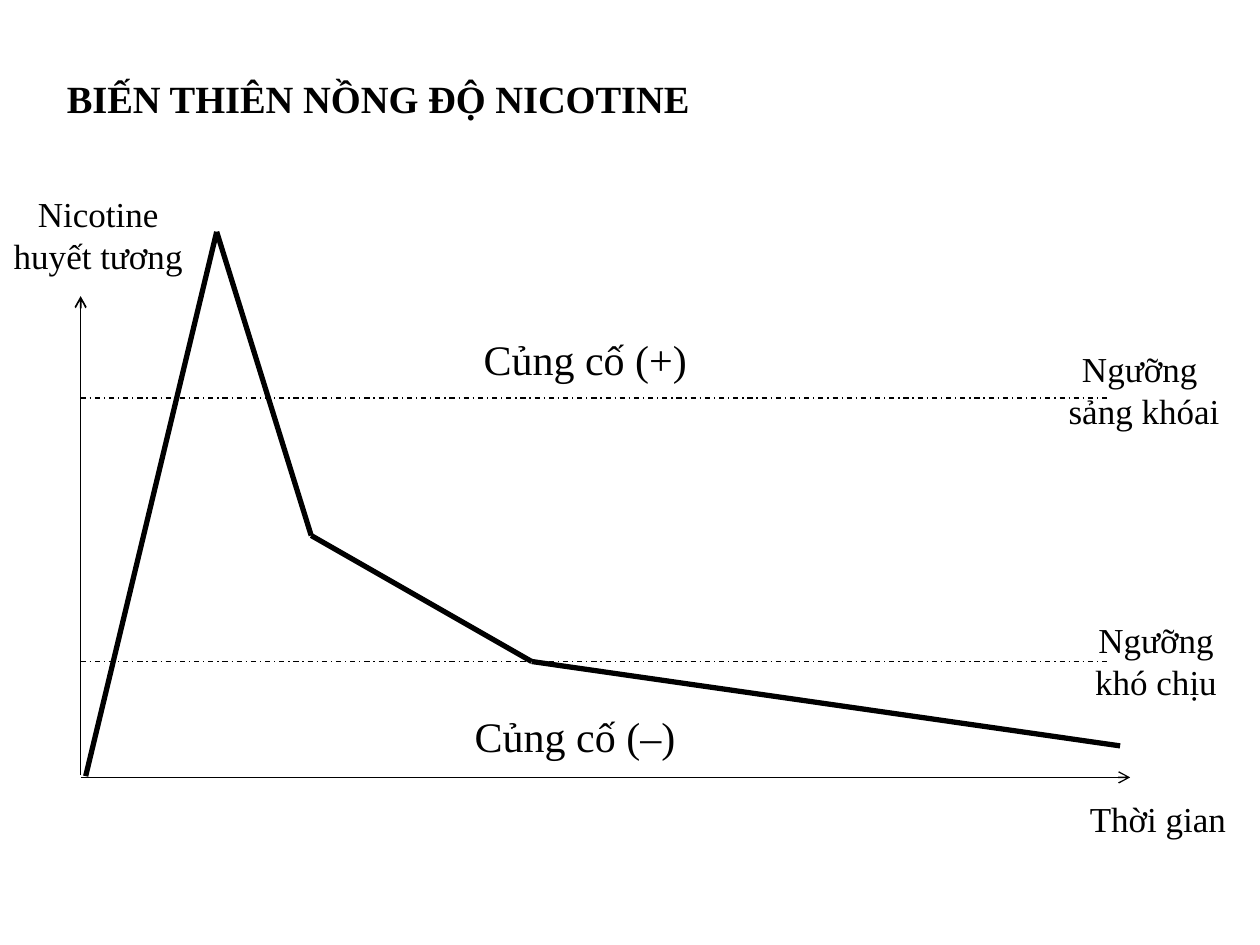
import pptx
import pptx.util
import pptx.dml.color
import pptx.enum.dml
import pptx.enum.shapes
import pptx.enum.text
import pptx.oxml.ns
from lxml import etree
from pptx.util import Inches

COLORS = {"ink": "000000"}
FONT = "Times New Roman"
ALIGN = pptx.enum.text.PP_ALIGN
INK = pptx.dml.color.RGBColor.from_string(COLORS["ink"])


def add_run(paragraph, text, size, bold=False):
    run = paragraph.add_run()
    run.text = text
    run.font.name = FONT
    run.font.size = pptx.util.Pt(size)
    run.font.bold = bold
    run.font.color.rgb = INK


def add_line(slide, start, end, width, dashed=False, arrow=False):
    line = slide.shapes.add_connector(
        pptx.enum.shapes.MSO_CONNECTOR.STRAIGHT,
        *(Inches(value) for value in (*start, *end)))
    line.line.color.rgb = INK
    line.line.width = pptx.util.Pt(width)
    if dashed:
        line.line.dash_style = pptx.enum.dml.MSO_LINE.DASH_DOT
    if arrow:
        tail = etree.SubElement(line.line._get_or_add_ln(), pptx.oxml.ns.qn("a:tailEnd"))
        tail.set("type", "arrow")
    etree.SubElement(line._element.spPr, pptx.oxml.ns.qn("a:effectLst"))


def add_label(slide, box, lines, size=20):
    """Centred text, one paragraph for each line."""
    frame = slide.shapes.add_textbox(*(Inches(value) for value in box)).text_frame
    frame.word_wrap = True
    for index, text in enumerate(lines):
        paragraph = frame.add_paragraph() if index else frame.paragraphs[0]
        paragraph.alignment = ALIGN.CENTER
        add_run(paragraph, text, size)
    return frame


def add_title(slide, box):
    title = slide.shapes.title
    title.left, title.top, title.width, title.height = (Inches(value) for value in box)
    frame = title.text_frame
    frame.word_wrap = True
    frame.auto_size = pptx.enum.text.MSO_AUTO_SIZE.NONE
    frame.vertical_anchor = pptx.enum.text.MSO_ANCHOR.MIDDLE
    heading = frame.paragraphs[0]
    heading.alignment = ALIGN.LEFT
    heading.line_spacing = 0.9
    add_run(heading, "BIẾN THIÊN NỒNG ĐỘ NICOTINE", 22, bold=True)


def add_curve_diagram(slide, box):
    left, top, width, height = box
    bottom = top + height

    def place(x, y):
        return left + x, top + y

    # Axes
    add_line(slide, (left, bottom - 0.02), (left, top), 1, arrow=True)
    add_line(slide, (left, bottom), (left + width, bottom), 0.75, arrow=True)

    # Nicotine level over time
    levels = [(0.04, 3.81), (1.08, -0.51), (1.83, 1.9), (3.58, 2.9), (8.25, 3.57)]
    for start, end in zip(levels, levels[1:]):
        add_line(slide, place(*start), place(*end), 3)

    # Thresholds
    for threshold in (2.9, 0.81):
        add_line(slide, place(0, threshold), place(8.17, threshold), 0.75, dashed=True)

    # Threshold and axis labels
    add_label(slide, (*place(7.58, 0.36), 1.72, 0.77), ["Ngưỡng ", "sảng khóai"])
    add_label(slide, (*place(7.75, 2.51), 1.57, 0.77), ["Ngưỡng", "khó chịu"])
    level_axis = add_label(slide, (*place(-0.67, -0.87), 1.76, 0.77),
                           ["Nicotine", "huyết tương"])
    # The first line sits slightly left of centre
    level_axis.paragraphs[0]._p.get_or_add_pPr().set("marR", str(Inches(0.14)))
    add_label(slide, (*place(7.86, 3.93), 1.38, 0.44), ["Thời gian"])

    # Reinforcement zones
    for x, y, text in ((2.43, 0.05, "Củng cố (+)"), (2.39, 3.04, "Củng cố (–) ")):
        zone = add_label(slide, (*place(x, y), 3.15, 0.74), [text], size=24)
        paragraph = zone.paragraphs[0]
        paragraph.line_spacing = 1.5
        properties = paragraph._p.get_or_add_pPr()
        properties.set("marL", str(Inches(0.5)))
        properties.set("indent", str(Inches(-0.5)))


def main():
    deck = pptx.Presentation()
    deck.slide_width, deck.slide_height = Inches(10), Inches(7.5)
    slide = deck.slides.add_slide(deck.slide_layouts.get_by_name("Title Only"))
    add_title(slide, (0.43, 0.37, 5.29, 0.86))
    add_curve_diagram(slide, (0.64, 2.35, 8.33, 3.82))
    deck.save("out.pptx")


if __name__ == "__main__":
    main()
